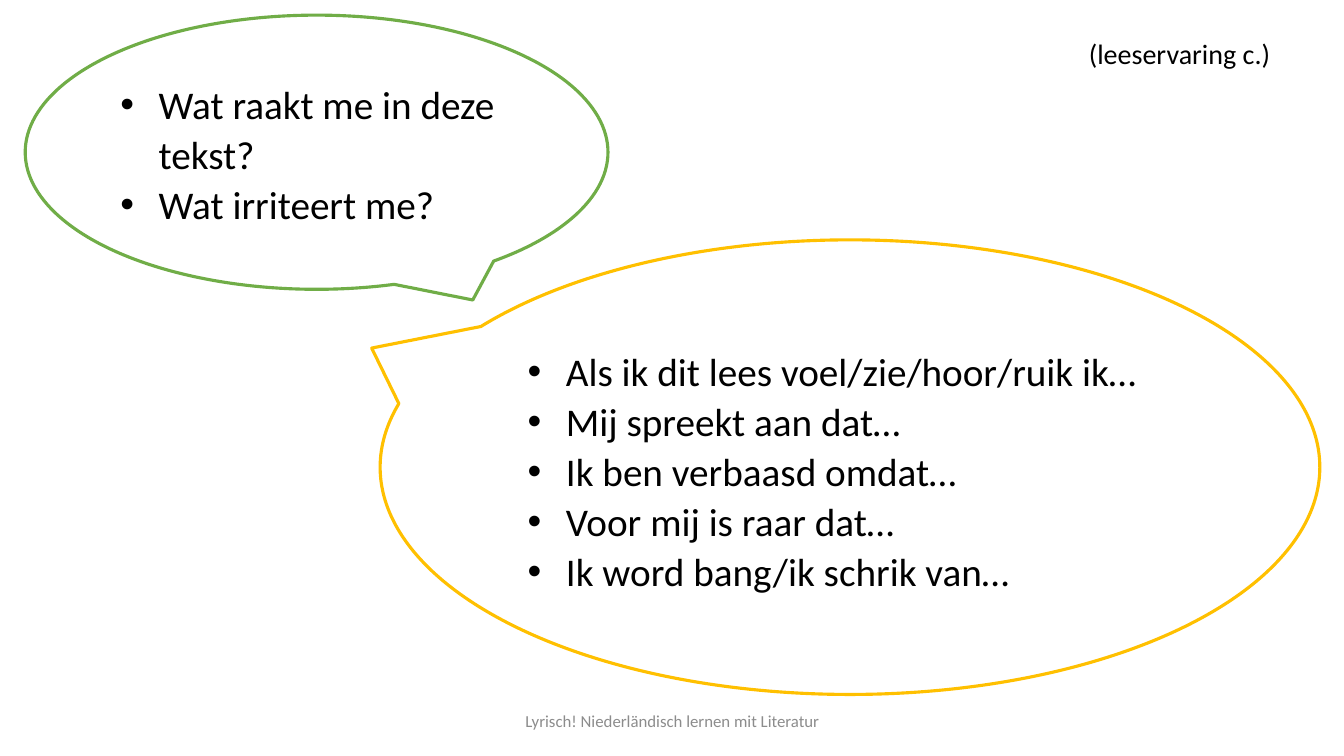
from dataclasses import dataclass

from lxml.etree import SubElement
from pptx import Presentation
from pptx.dml.color import RGBColor
from pptx.enum.shapes import MSO_SHAPE
from pptx.enum.text import MSO_ANCHOR, MSO_AUTO_SIZE, PP_ALIGN
from pptx.oxml.ns import qn
from pptx.shapes.base import BaseShape
from pptx.slide import Slide
from pptx.text.text import TextFrame
from pptx.util import Emu, Pt

EMU_PER_PX = 9144  # 100 px to the inch


@dataclass(frozen=True)
class Theme:
    font: str = "Calibri"
    text: str = "000000"
    muted: str = "8C8C8C"
    paper: str = "FFFFFF"
    green: str = "70AD47"
    yellow: str = "FFC000"
    bubble_size: int = 28
    label_size: int = 20
    footer_size: int = 12
    outline: float = 2.25


THEME = Theme()


@dataclass(frozen=True)
class Box:
    left: int
    top: int
    width: int
    height: int

    def emu(self) -> tuple[Emu, Emu, Emu, Emu]:
        return px(self.left), px(self.top), px(self.width), px(self.height)


@dataclass(frozen=True)
class Bubble:
    box: Box
    tail: tuple[float, float]
    color: str
    lines: tuple[str, ...]
    first_spacing: float = 1.06


BUBBLES = (
    Bubble(Box(25, 15, 578, 272), (0.268, 0.539), THEME.green,
           ("Wat raakt me in deze tekst?", "Wat irriteert me?")),
    Bubble(Box(377, 238, 932, 451), (-0.509, -0.262), THEME.yellow,
           ("Als ik dit lees voel/zie/hoor/ruik ik…",
            "Mij spreekt aan dat…",
            "Ik ben verbaasd omdat…",
            "Voor mij is raar dat…",
            "Ik word bang/ik schrik van…"),
           first_spacing=1.15),
)


def px(value: int) -> Emu:
    return Emu(value * EMU_PER_PX)


def write(frame: TextFrame, lines: tuple[str, ...], *, size: int,
          color: str = THEME.text, align: PP_ALIGN = PP_ALIGN.LEFT,
          anchor: MSO_ANCHOR = MSO_ANCHOR.TOP, bullets: bool = False,
          spacing: float = 1.0, first_spacing: float = 1.0,
          space_after: int = 0) -> None:
    frame.word_wrap = True
    frame.vertical_anchor = anchor
    for index, line in enumerate(lines):
        para = frame.add_paragraph() if index else frame.paragraphs[0]
        para.alignment = align
        para.line_spacing = spacing if index else first_spacing
        para.space_after = Pt(space_after if index == len(lines) - 1 else 0)
        if bullets:
            properties = para._p.get_or_add_pPr()
            properties.set("marL", str(px(38)))
            properties.set("indent", str(-px(38)))
            SubElement(properties, qn("a:buFont"), typeface="Arial")
            SubElement(properties, qn("a:buChar"), char="•")
        span = para.add_run()
        span.text = line
        span.font.name = THEME.font
        span.font.size = Pt(size)
        span.font.color.rgb = RGBColor.from_string(color)


def add_bubble(page: Slide, bubble: Bubble) -> BaseShape:
    shape = page.shapes.add_shape(MSO_SHAPE.OVAL_CALLOUT, *bubble.box.emu())
    for index, offset in enumerate(bubble.tail):
        shape.adjustments[index] = offset
    shape.shadow.inherit = False
    shape.fill.solid()
    shape.fill.fore_color.rgb = RGBColor.from_string(THEME.paper)
    shape.line.color.rgb = RGBColor.from_string(bubble.color)
    shape.line.width = Pt(THEME.outline)
    write(shape.text_frame, bubble.lines, size=THEME.bubble_size,
          anchor=MSO_ANCHOR.MIDDLE, bullets=True, spacing=1.06,
          first_spacing=bubble.first_spacing, space_after=8)
    return shape


def add_text_frame(page: Slide, box: Box) -> TextFrame:
    return page.shapes.add_textbox(*box.emu()).text_frame


def main() -> None:
    deck = Presentation()
    deck.slide_width, deck.slide_height = px(1333), px(750)
    page = deck.slides.add_slide(deck.slide_layouts[6])

    # Footer
    write(add_text_frame(page, Box(442, 695, 450, 40)),
          ("Lyrisch! Niederländisch lernen mit Literatur",),
          size=THEME.footer_size, color=THEME.muted,
          align=PP_ALIGN.CENTER, anchor=MSO_ANCHOR.MIDDLE)

    # Speech bubbles
    for bubble in BUBBLES:
        add_bubble(page, bubble)

    # Corner label
    label = add_text_frame(page, Box(1070, 31, 202, 44))
    write(label, ("(leeservaring c.)",), size=THEME.label_size)
    label.auto_size = MSO_AUTO_SIZE.SHAPE_TO_FIT_TEXT

    deck.save("out.pptx")


if __name__ == "__main__":
    main()
